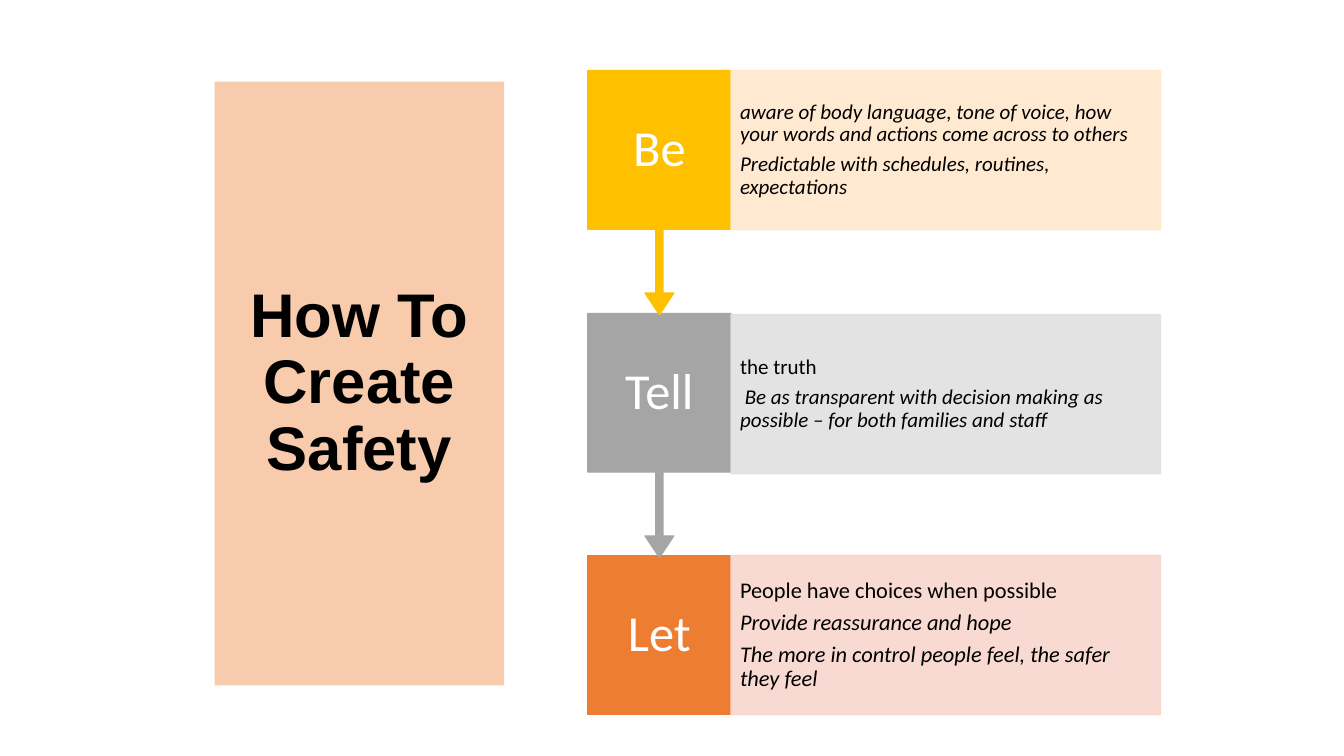
from dataclasses import dataclass

from lxml import etree
from pptx import Presentation
from pptx.dml.color import RGBColor
from pptx.enum.shapes import MSO_SHAPE as Preset
from pptx.enum.text import MSO_ANCHOR as Anchor, PP_ALIGN as Align
from pptx.oxml.ns import qn
from pptx.util import Inches, Pt

STEP_LEFT, STEP_WIDTH, STEP_HEIGHT = 5.83, 1.42, 1.58
CALLOUT_HEIGHT = 2.42
DETAIL_LEFT, DETAIL_WIDTH = 7.25, 4.26
CALLOUT_ADJUSTMENTS = (0.05, 0.1, 0.15, 0.65)
SPACE_AFTER_SHARE = 0.35


@dataclass(frozen=True)
class Line:
    text: str
    italic: bool = True


@dataclass(frozen=True)
class Step:
    heading: str
    top: float
    detail_top: float
    color: str
    tint: str
    size: int
    lines: tuple[Line, ...]
    has_arrow: bool = True


STEPS = (
    Step("Be", 0.7, 0.7, "FFC000", "FFE8CC", 15, (
        Line("aware of body language, tone of voice, how your words and actions come across to others"),
        Line("Predictable with schedules, routines, expectations"),
    )),
    Step("Tell", 3.11, 3.12, "A5A5A5", "E1E1E1", 15, (
        Line("the truth", italic=False),
        Line(" Be as transparent with decision making as possible – for both families and staff"),
    )),
    Step("Let", 5.51, 5.51, "ED7D31", "F8D7CE", 16, (
        Line("People have choices when possible", italic=False),
        Line("Provide reassurance and hope"),
        Line("The more in control people feel, the safer they feel"),
    ), has_arrow=False),
)


def rgb(value: str) -> RGBColor:
    return RGBColor.from_string(value)


def set_opacity(shape, percent: int) -> None:
    """Apply one opacity to both the fill and the outline."""
    for color in shape._element.spPr.iter(qn("a:srgbClr")):
        etree.SubElement(color, qn("a:alpha"), val=str(percent * 1000))


def add_block(page, preset, left: float, top: float, width: float, height: float,
              color: str, outlined: bool = True):
    block = page.shapes.add_shape(preset, Inches(left), Inches(top), Inches(width), Inches(height))
    block.shadow.inherit = False
    block.fill.solid()
    block.fill.fore_color.rgb = rgb(color)
    if outlined:
        block.line.color.rgb = rgb(color)
        block.line.width = Pt(1)
    else:
        block.line.fill.background()
    return block


def write(box, lines: tuple[Line, ...], *, size: int, color: str = "000000",
          font: str = "Calibri", bold: bool = False, align=Align.LEFT,
          margins: tuple[float, float] = (0.1, 0.05), space_after: float = 0) -> None:
    """Fill a box with one paragraph per line; margins are side and top/bottom."""
    frame = box.text_frame
    frame.word_wrap = True
    frame.vertical_anchor = Anchor.MIDDLE
    frame.margin_left = frame.margin_right = Inches(margins[0])
    frame.margin_top = frame.margin_bottom = Inches(margins[1])
    for index, line in enumerate(lines):
        para = frame.add_paragraph() if index else frame.paragraphs[0]
        para.alignment = align
        para.line_spacing = 0.9
        para.space_after = Pt(space_after)
        span = para.add_run()
        span.text = line.text
        span.font.name = font
        span.font.size = Pt(size)
        span.font.bold = bold
        span.font.italic = line.italic
        span.font.color.rgb = rgb(color)


def add_step(page, step: Step) -> None:
    preset = Preset.UP_ARROW_CALLOUT if step.has_arrow else Preset.RECTANGLE
    height = CALLOUT_HEIGHT if step.has_arrow else STEP_HEIGHT
    block = add_block(page, preset, STEP_LEFT, step.top, STEP_WIDTH, height, step.color)
    if step.has_arrow:
        block.rotation = 180
        for index, value in enumerate(CALLOUT_ADJUSTMENTS):
            block.adjustments[index] = value

    heading = page.shapes.add_textbox(Inches(STEP_LEFT), Inches(step.top),
                                      Inches(STEP_WIDTH), Inches(STEP_HEIGHT))
    write(heading, (Line(step.heading, italic=False),), size=36, color="FFFFFF",
          align=Align.CENTER, margins=(0.1, 0.28))

    detail = add_block(page, Preset.RECTANGLE, DETAIL_LEFT, step.detail_top,
                       DETAIL_WIDTH, STEP_HEIGHT, step.tint)
    set_opacity(detail, 90)
    write(detail, step.lines, size=step.size, margins=(0.09, 0.21),
          space_after=step.size * SPACE_AFTER_SHARE)


def main() -> None:
    deck = Presentation()
    deck.slide_width, deck.slide_height = Inches(13.33), Inches(7.5)
    page = deck.slides.add_slide(deck.slide_layouts[6])

    title = add_block(page, Preset.RECTANGLE, 2.13, 0.81, 2.87, 5.99, "F8CBAD", outlined=False)
    write(title, (Line("How To Create Safety", italic=False),), size=44, font="Arial",
          bold=True, align=Align.CENTER)

    # Bottom step first, so each arrow tip lies over the step below it.
    for step in reversed(STEPS):
        add_step(page, step)
    deck.save("out.pptx")


if __name__ == "__main__":
    main()
